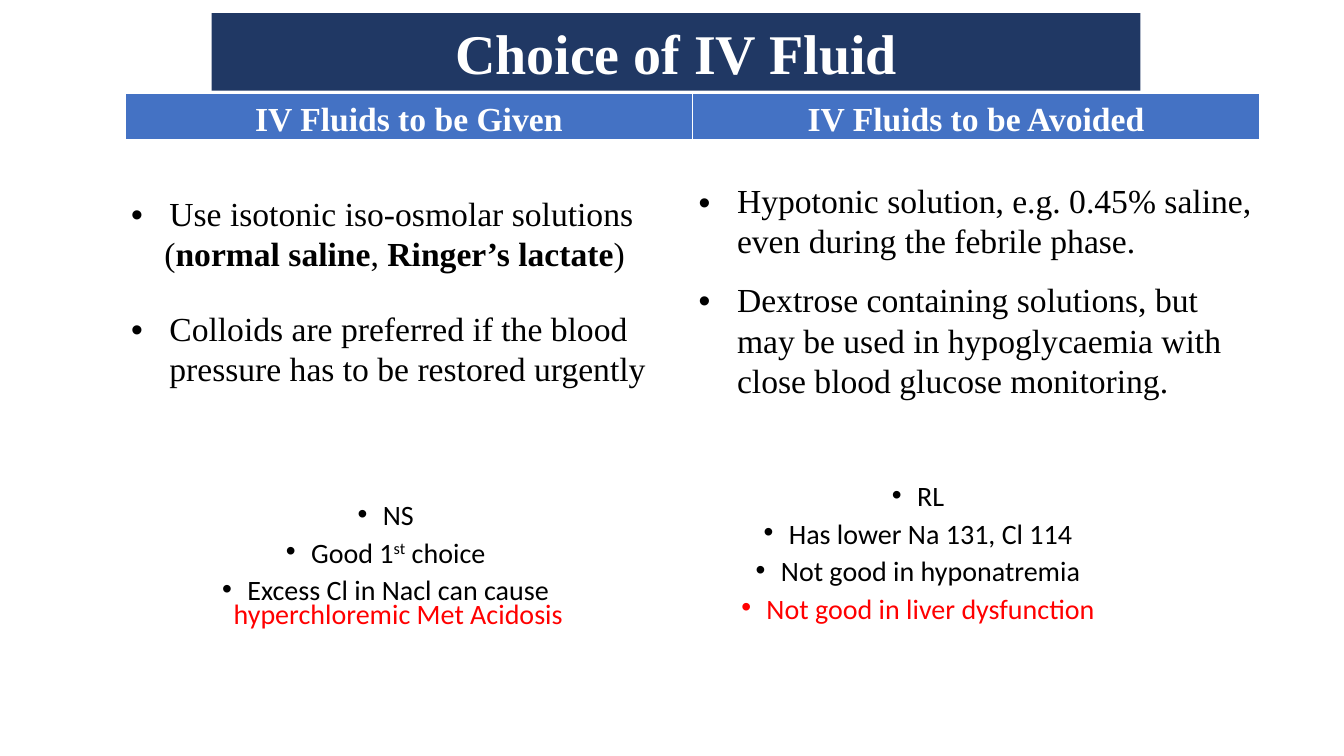
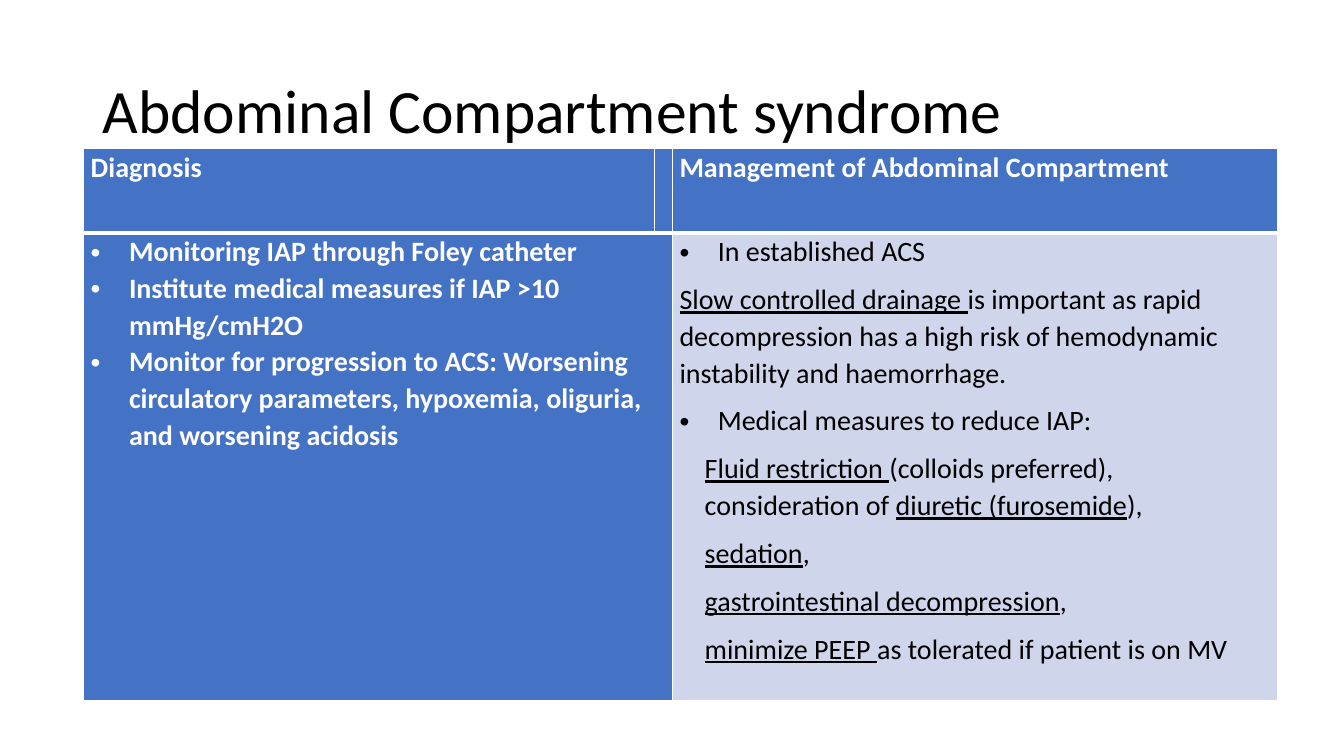
from dataclasses import dataclass
from lxml import etree
from pptx import Presentation
from pptx.dml.color import RGBColor
from pptx.enum.shapes import MSO_SHAPE
from pptx.enum.text import MSO_ANCHOR as ANCHOR, PP_ALIGN as ALIGN
from pptx.oxml.ns import qn
from pptx.util import Inches, Pt

WHITE, BLACK, RED = "FFFFFF", "000000", "FF0000"
NAVY, BLUE, PALE = "203864", "4472C4", "CFD5EA"
SERIF, SANS = "Times New Roman", "Calibri"


@dataclass
class Style:
    font: str
    size: float
    color: str = BLACK
    bold: bool = False
    align: ALIGN = ALIGN.LEFT
    line: float = 1.07


@dataclass
class Para:
    """Runs are (text, marks): b bold, u underline, r red, s superscript."""
    runs: list
    indent: float = 0
    hang: float = 0
    before: float = 0
    after: float = 0
    line: float = 0


def plain(text, **kw):
    return Para([(text, "")], **kw)


def bullet(text, **kw):
    return plain(text, indent=0.38, hang=0.38, **kw)


def note(*runs):
    return Para(list(runs), indent=0.25, hang=0.25, before=10)


def measure(*runs):
    return Para(list(runs), indent=0.25, after=8)


FLUID_HEADS = ["IV Fluids to be Given", "IV Fluids to be Avoided"]
FLUID_GIVEN = [
    bullet("Use isotonic iso-osmolar solutions"),
    Para([("(", ""), ("normal saline", "b"), (", ", ""),
          ("Ringer’s lactate", "b"), (")", "")], indent=0.33),
    bullet("Colloids are preferred if the blood pressure has to be restored urgently", before=25.4),
]
FLUID_AVOIDED = [
    bullet("Hypotonic solution, e.g. 0.45% saline, even during the febrile phase."),
    bullet("Dextrose containing solutions, but may be used in hypoglycaemia "
           "with close blood glucose monitoring.", before=12.8, line=1.1),
]
FLUID_NOTES = [
    ((1.57, 4.98, 4.51, 1.58), [
        note(("NS", "")),
        note(("Good 1", ""), ("st", "s"), (" choice", "")),
        note(("Excess Cl in Nacl can cause ", ""), ("hyperchloremic Met Acidosis", "r")),
    ]),
    ((7.21, 4.79, 3.79, 1.75), [
        note(("RL", "")),
        note(("Has lower Na 131, Cl 114", "")),
        note(("Not good in hyponatremia", "")),
        note(("Not good in liver dysfunction", "r")),
    ]),
]
ACS_HEADS = ["Diagnosis", "", "Management of Abdominal Compartment"]
ACS_DIAGNOSIS = [
    bullet("Monitoring IAP through Foley catheter"),
    bullet("Institute medical measures if IAP >10 mmHg/cmH2O"),
    bullet("Monitor for progression to ACS: Worsening circulatory parameters, "
           "hypoxemia, oliguria, and worsening acidosis"),
]
ACS_MANAGEMENT = [
    bullet("In established ACS", after=8),
    Para([("Slow controlled drainage ", "u"),
          ("is important as rapid decompression has a high risk of hemodynamic "
           "instability and haemorrhage.", "")], after=8),
    bullet("Medical measures to reduce IAP:", after=8),
    measure(("Fluid restriction ", "u"), ("(colloids preferred), consideration of ", ""),
            ("diuretic (furosemide", "u"), ("),", "")),
    measure(("sedation", "u"), (",", "")),
    measure(("gastrointestinal decompression", "u"), (",", "")),
    measure(("minimize PEEP ", "u"), ("as tolerated if patient is on MV", "")),
]


def rgb(color):
    return RGBColor.from_string(color)


def box(values):
    return [Inches(v) for v in values]


def write(tf, paras, style):
    tf.word_wrap = True
    for i, para in enumerate(paras):
        p = tf.add_paragraph() if i else tf.paragraphs[0]
        pPr = p._p.get_or_add_pPr()
        pPr.set("marL", str(Inches(para.indent)))
        pPr.set("indent", str(-Inches(para.hang)))
        if para.hang:
            etree.SubElement(pPr, qn("a:buFont")).set("typeface", "Arial")
            etree.SubElement(pPr, qn("a:buChar")).set("char", "•")
        p.alignment = style.align
        p.line_spacing = para.line or style.line
        p.space_before = Pt(para.before if i else 0)
        p.space_after = Pt(para.after)
        for text, marks in para.runs:
            r = p.add_run()
            r.text = text
            f = r.font
            f.name, f.size = style.font, Pt(style.size)
            f.bold = style.bold or "b" in marks
            f.underline = "u" in marks
            f.color.rgb = rgb(RED if "r" in marks else style.color)
            if "s" in marks:
                r._r.get_or_add_rPr().set("baseline", "30000")


def add_text(slide, at, paras, style, anchor=ANCHOR.TOP):
    tf = slide.shapes.add_textbox(*box(at)).text_frame
    tf.vertical_anchor = anchor
    write(tf, paras, style)


def set_borders(cell, top, bottom):
    """White cell borders; the side borders are 1 pt."""
    tcPr = cell._tc.get_or_add_tcPr()
    for i, (side, width) in enumerate(zip("LRTB", (1, 1, top, bottom))):
        ln = etree.Element(qn(f"a:ln{side}"), w=str(Pt(width)))
        fill = etree.SubElement(ln, qn("a:solidFill"))
        etree.SubElement(fill, qn("a:srgbClr")).set("val", WHITE)
        tcPr.insert(i, ln)


def add_table(slide, at, cols, rows, heads, head_style, margin):
    """Table with a blue heading row above one body row."""
    table = slide.shapes.add_table(len(rows), len(cols), *box(at)).table
    table.first_row = table.horz_banding = False
    for col, width in zip(table.columns, cols):
        col.width = Inches(width)
    for row, height in zip(table.rows, rows):
        row.height = Inches(height)
    for c, head in enumerate(heads):
        for r, edges in enumerate([(1, 3), (3, 1)]):
            cell = table.cell(r, c)
            cell.margin_left = cell.margin_right = Inches(margin)
            cell.margin_top = cell.margin_bottom = 0
            set_borders(cell, *edges)
        top = table.cell(0, c)
        top.fill.solid()
        top.fill.fore_color.rgb = rgb(BLUE)
        if head:
            write(top.text_frame, [plain(head)], head_style)
    return table


def fill_cell(cell, paras, style, color=None, anchor=ANCHOR.TOP):
    if color:
        cell.fill.solid()
        cell.fill.fore_color.rgb = rgb(color)
    else:
        cell.fill.background()
    cell.vertical_anchor = anchor
    write(cell.text_frame, paras, style)


def build_fluids(slide):
    table = add_table(slide, (1.24, 0.93, 11.25, 3.45), (5.63, 5.62), (0.47, 2.98), FLUID_HEADS,
                      Style(SERIF, 24, WHITE, True, ALIGN.CENTER, 1.2), 0.06)
    for c, paras in enumerate([FLUID_GIVEN, FLUID_AVOIDED]):
        fill_cell(table.cell(1, c), paras, Style(SERIF, 24), anchor=ANCHOR.MIDDLE)

    band = slide.shapes.add_shape(MSO_SHAPE.RECTANGLE, *box((2.1, 0.13, 9.21, 0.77)))
    band.shadow.inherit = False
    band.fill.solid()
    band.fill.fore_color.rgb = rgb(NAVY)
    band.line.fill.background()
    band.text_frame.vertical_anchor = ANCHOR.MIDDLE
    write(band.text_frame, [plain("Choice of IV Fluid")],
          Style(SERIF, 40, WHITE, True, ALIGN.CENTER, 1.0))

    for at, paras in FLUID_NOTES:
        add_text(slide, at, paras, Style(SANS, 20, align=ALIGN.CENTER, line=0.7))


def build_acs(slide):
    add_text(slide, (0.92, 0.4, 11.5, 1.45), [plain("Abdominal Compartment syndrome")],
             Style(SANS, 44, line=0.9), ANCHOR.MIDDLE)
    strong = Style(SANS, 20, WHITE, True)
    table = add_table(slide, (0.83, 1.47, 11.84, 5.48), (5.66, 0.18, 6), (0.84, 4.64),
                      ACS_HEADS, strong, 0.07)
    table.cell(1, 0).merge(table.cell(1, 1))
    fill_cell(table.cell(1, 0), ACS_DIAGNOSIS, strong, BLUE)
    fill_cell(table.cell(1, 2), ACS_MANAGEMENT, Style(SANS, 20), PALE)


def main():
    prs = Presentation()
    prs.slide_width, prs.slide_height = Inches(13.33), Inches(7.5)
    for build in (build_fluids, build_acs):
        build(prs.slides.add_slide(prs.slide_layouts[6]))
    prs.save("out.pptx")


if __name__ == "__main__":
    main()
